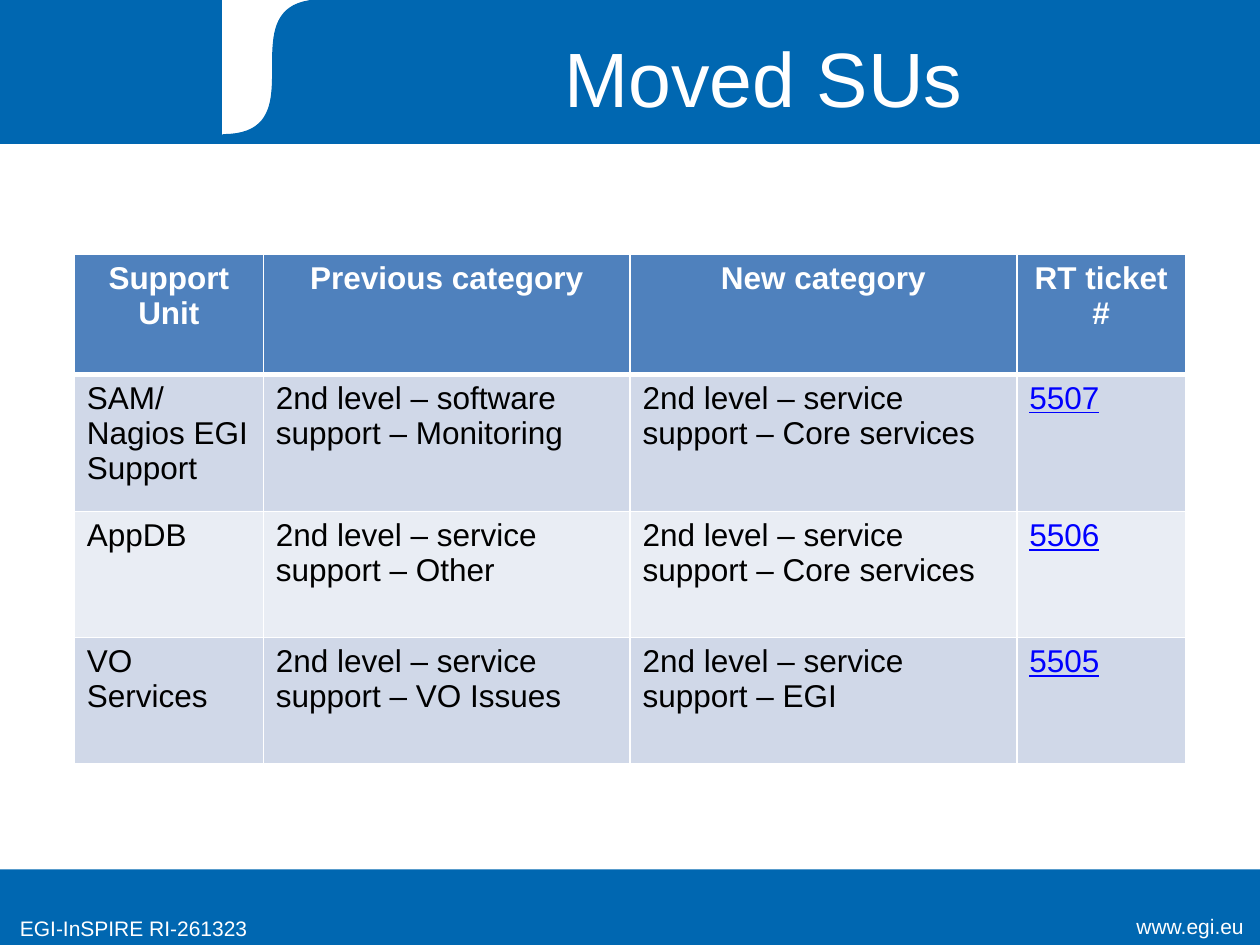
from lxml import etree
from pptx import Presentation
from pptx.dml.color import RGBColor
from pptx.enum.shapes import MSO_SHAPE
from pptx.enum.text import MSO_ANCHOR, PP_ALIGN
from pptx.oxml.ns import qn
from pptx.util import Inches, Pt

RECTANGLE = MSO_SHAPE.RECTANGLE
MIDDLE = MSO_ANCHOR.MIDDLE
LEFT, CENTER, RIGHT = PP_ALIGN.LEFT, PP_ALIGN.CENTER, PP_ALIGN.RIGHT

WHITE = RGBColor(0xFF, 0xFF, 0xFF)
BLACK = RGBColor(0x00, 0x00, 0x00)
BRAND_BLUE = RGBColor(0x00, 0x67, 0xB1)
HEADER_BLUE = RGBColor(0x4F, 0x81, 0xBD)
BAND_DARK = RGBColor(0xD0, 0xD8, 0xE8)
BAND_LIGHT = RGBColor(0xE9, 0xED, 0xF4)
LINK_BLUE = RGBColor(0x00, 0x00, 0xFF)

FONT = "Arial"
CURVE_STEPS = 40
COLUMN_WIDTHS = (1.5, 2.91, 3.07, 1.34)
ROW_HEIGHTS = (0.95, 1.09, 1, 1)
ROWS = (
    ("Support Unit", "Previous category", "New category", "RT ticket #"),
    ("SAM/Nagios EGI Support", "2nd level – software support – Monitoring",
     "2nd level – service support – Core services", "5507"),
    ("AppDB", "2nd level – service support – Other",
     "2nd level – service support – Core services", "5506"),
    ("VO Services", "2nd level – service support – VO Issues",
     "2nd level – service support – EGI", "5505"),
)


def set_text(frame, text, size, color, align=LEFT):
    """Write one formatted paragraph into a text frame and return it."""
    para = frame.paragraphs[0]
    para.text = text
    para.alignment = align
    para.font.name = FONT
    para.font.size = Pt(size)
    para.font.color.rgb = color
    return para


def paint(shape, fill, line=None):
    """Give a shape a flat fill and an optional thin outline."""
    shape.shadow.inherit = False
    shape.fill.solid()
    shape.fill.fore_color.rgb = fill
    if line is None:
        shape.line.fill.background()
    else:
        shape.line.color.rgb = line
        shape.line.width = Pt(0.75)


def add_bar(page, box, fill, line=None):
    """Add a plain rectangle."""
    bar = page.shapes.add_shape(RECTANGLE, *map(Inches, box))
    paint(bar, fill, line)


def add_swoosh(page, box):
    """Add a white panel mostly covered by a blue shape with an S-curved left edge."""
    left, top, width, height = box
    add_bar(page, box, WHITE, WHITE)
    right, bottom, bend = left + width, top + height, 0.79
    points = [(right, bottom), (left, bottom)]
    for step in range(1, CURVE_STEPS + 1):
        t = step / CURVE_STEPS
        x = left + bend * (3 * t * (1 - t) ** 2 + t ** 3)
        y = top + height * ((1 - t) ** 3 + 3 * t * (1 - t) ** 2)
        points.append((x, y))
    builder = page.shapes.build_freeform(Inches(right), Inches(top))
    builder.add_line_segments([(Inches(x), Inches(y)) for x, y in points])
    paint(builder.convert_to_shape(), BRAND_BLUE, BRAND_BLUE)


def add_header(page, box, title_text):
    """Build the top banner with the slide title over it."""
    add_bar(page, box, BRAND_BLUE, BRAND_BLUE)
    add_swoosh(page, (1.77, 0, 1.97, 1.07))
    title = page.shapes.title
    title.left, title.top, title.width, title.height = map(
        Inches, (2.32, 0.13, 7.48, 0.95))
    title.text_frame.vertical_anchor = MIDDLE
    set_text(title.text_frame, title_text, 44, WHITE, CENTER)
    title.element.getparent().append(title.element)


def add_footer(page, box):
    """Build the bottom bar with the project number and web address."""
    add_bar(page, box, BRAND_BLUE)
    labels = (
        ("www.egi.eu", (8.39, 7.2, 1.58, 0.31), RIGHT),
        ("EGI-InSPIRE RI-261323", (0.06, 7.22, 2.5, 0.31), LEFT),
    )
    for text, label_box, align in labels:
        label = page.shapes.add_textbox(*map(Inches, label_box))
        label.text_frame.word_wrap = True
        set_text(label.text_frame, text, 12, WHITE, align)


def set_borders(cell, row):
    """Draw white cell borders, thicker between the header and the body."""
    properties = cell._tc.get_or_add_tcPr()
    widths = {"L": 1, "R": 1, "T": 3 if row == 1 else 1, "B": 3 if row == 0 else 1}
    for side, width in widths.items():
        line = etree.SubElement(properties, qn(f"a:ln{side}"), w=str(Pt(width)))
        fill = etree.SubElement(line, qn("a:solidFill"))
        etree.SubElement(fill, qn("a:srgbClr"), val=str(WHITE))


def add_unit_table(page, box):
    """Build the table of support units that changed category."""
    frame = page.shapes.add_table(len(ROWS), len(COLUMN_WIDTHS), *map(Inches, box))
    table = frame.table
    for column, width in zip(table.columns, COLUMN_WIDTHS):
        column.width = Inches(width)
    for row, (height, texts) in enumerate(zip(ROW_HEIGHTS, ROWS)):
        table.rows[row].height = Inches(height)
        is_header = row == 0
        band = HEADER_BLUE if is_header else BAND_DARK if row % 2 else BAND_LIGHT
        for index, text in enumerate(texts):
            cell = table.cell(row, index)
            set_borders(cell, row)
            cell.fill.solid()
            cell.fill.fore_color.rgb = band
            is_ticket = not is_header and index == len(texts) - 1
            color = WHITE if is_header else LINK_BLUE if is_ticket else BLACK
            para = set_text(cell.text_frame, text, 18, color,
                            CENTER if is_header else LEFT)
            para.font.bold = is_header
            para.font.underline = is_ticket


def main():
    """Create the deck and save it."""
    deck = Presentation()
    deck.slide_width, deck.slide_height = Inches(10), Inches(7.5)
    page = deck.slides.add_slide(deck.slide_layouts.get_by_name("Title Only"))
    add_footer(page, (0, 6.9, 10, 0.6))
    add_header(page, (0, 0, 10, 1.14), "Moved SUs")
    add_unit_table(page, (0.59, 2.02, sum(COLUMN_WIDTHS), sum(ROW_HEIGHTS)))
    deck.save("out.pptx")


if __name__ == "__main__":
    main()
